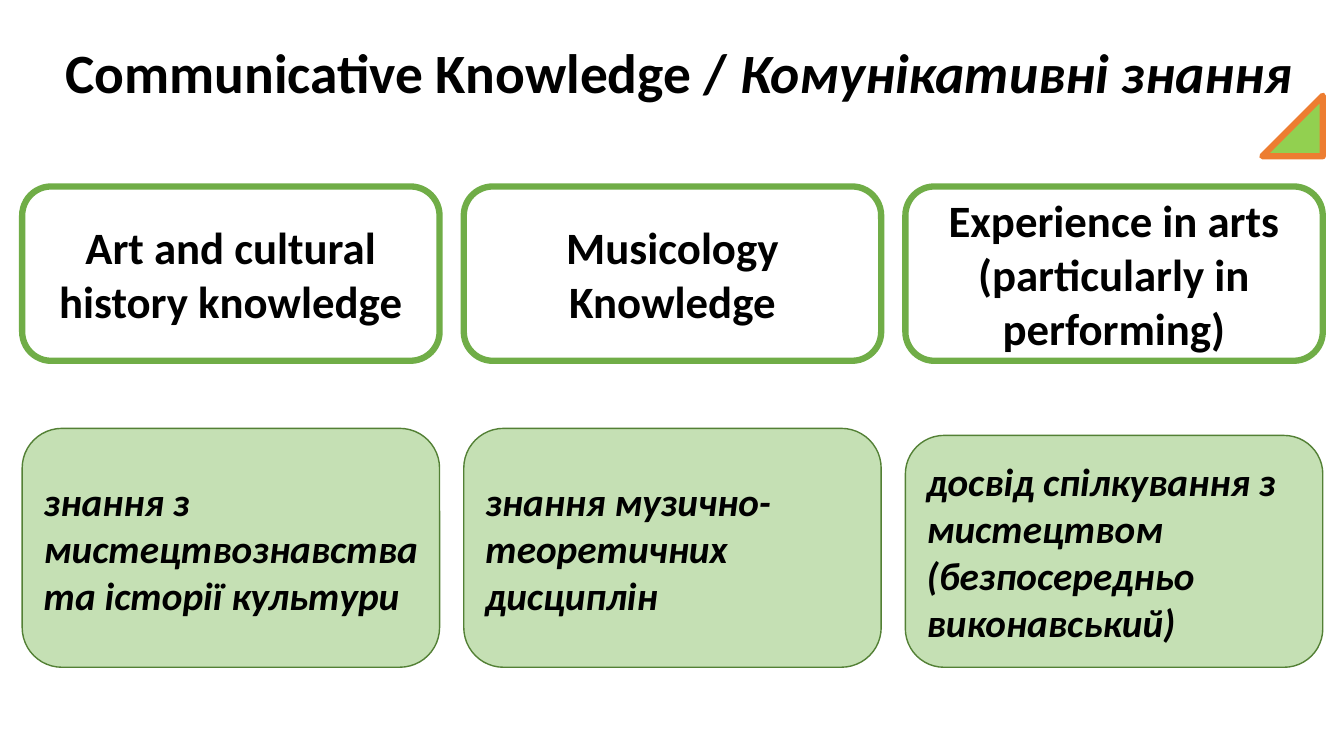
from pptx import Presentation
from pptx.dml.color import RGBColor
from pptx.enum.shapes import MSO_SHAPE as SHAPE
from pptx.enum.text import MSO_ANCHOR as ANCHOR, PP_ALIGN as ALIGN
from pptx.util import Emu, Pt

PX = 9144  # 100 px to the inch
COLORS = {
    "text": "000000",
    "white": "FFFFFF",
    "green": "70AD47",
    "pale": "C5E0B4",
    "dark": "538035",
    "lime": "92D050",
    "orange": "ED7D31",
}


def add_box(kind, box, fill, line, width):
    s = slide.shapes.add_shape(kind, *[Emu(v * PX) for v in box])
    s.shadow.inherit = False
    s.fill.solid()
    s.fill.fore_color.rgb = RGBColor.from_string(COLORS[fill])
    s.line.color.rgb = RGBColor.from_string(COLORS[line])
    s.line.width = Pt(width)
    return s


def write(s, runs, size, align):
    """Fill a shape with one bold paragraph of (text, italic) runs."""
    tf = s.text_frame
    tf.word_wrap = True
    tf.vertical_anchor = ANCHOR.MIDDLE
    p = tf.paragraphs[0]
    p.alignment = align
    for text, italic in runs:
        r = p.add_run()
        r.text = text
        font = {"name": "Calibri", "size": Pt(size), "bold": True, "italic": italic}
        for key, value in font.items():
            setattr(r.font, key, value)
        r.font.color.rgb = RGBColor.from_string(COLORS["text"])
    return p


prs = Presentation()
prs.slide_width, prs.slide_height = Emu(1333 * PX), Emu(750 * PX)
slide = prs.slides.add_slide(prs.slide_layouts[6])

title = slide.shapes.add_textbox(*[Emu(v * PX) for v in (55, 32, 1257, 86)])
title_runs = [("Communicative Knowledge / ", False), ("Комунікативні знання", True)]
write(title, title_runs, 39.6, ALIGN.LEFT).line_spacing = 0.9

# English term, Ukrainian term, top of the Ukrainian card
LEFT, STEP, CARD_W, CARD_BOTTOM = 22, 438, 414, 662
columns = [
    ("Art and cultural history knowledge",
     "знання з мистецтвознавства та історії культури", 425),
    ("Musicology Knowledge",
     "знання музично-теоретичних дисциплін", 425),
    ("Experience in arts (particularly in performing)",
     "досвід спілкування з мистецтвом (безпосередньо виконавський)", 432),
]
for i, (english, ukrainian, top) in enumerate(columns):
    x = LEFT + i * STEP
    head = add_box(SHAPE.ROUNDED_RECTANGLE, (x, 185, CARD_W, 173), "white", "green", 4.5)
    write(head, [(english, False)], 32, ALIGN.CENTER)
    card = add_box(SHAPE.ROUNDED_RECTANGLE, (x, top, CARD_W, CARD_BOTTOM - top),
                   "pale", "dark", 1)
    write(card, [(ukrainian, True)], 28, ALIGN.LEFT)

corner = add_box(SHAPE.ISOSCELES_TRIANGLE, (1252, 95, 60, 60), "lime", "orange", 4.5)
corner.adjustments[0] = 1

prs.save("out.pptx")
